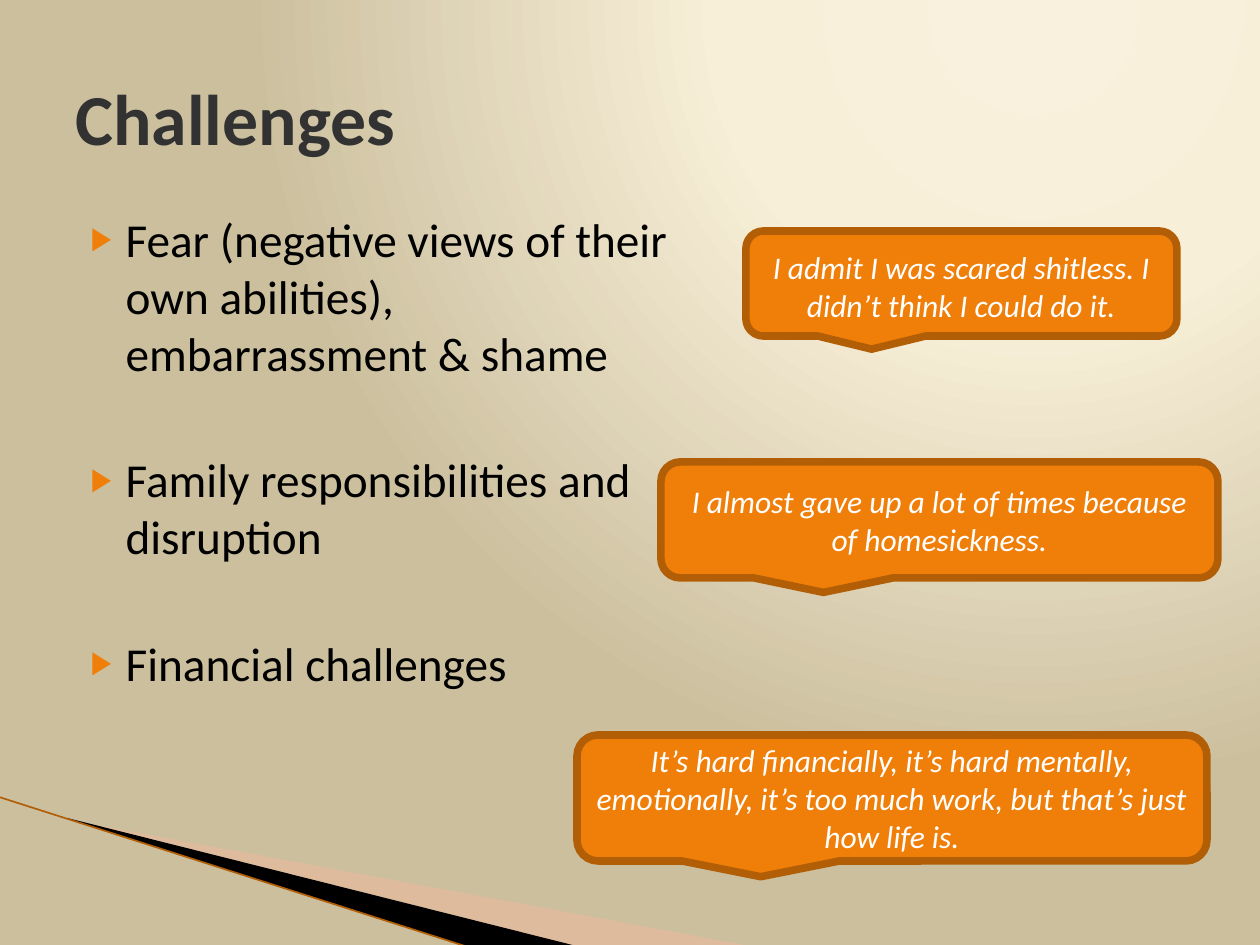
from lxml.etree import SubElement
from pptx import Presentation
from pptx.dml.color import RGBColor
from pptx.enum.shapes import MSO_CONNECTOR as Connector, MSO_SHAPE as Preset
from pptx.enum.text import MSO_ANCHOR as Anchor, PP_ALIGN as Align
from pptx.oxml.ns import qn
from pptx.util import Emu, Pt

SCALE = 914400 / 126
BLACK = RGBColor(0x00, 0x00, 0x00)
WHITE = RGBColor(0xFF, 0xFF, 0xFF)
CHARCOAL = RGBColor(0x32, 0x32, 0x32)
ORANGE = RGBColor(0xF0, 0x7F, 0x09)
BROWN = RGBColor(0xB2, 0x5E, 0x07)
PEACH = RGBColor(0xFC, 0xB7, 0x9B)
BACKGROUND = {0: RGBColor(0xF9, 0xF1, 0xDE), 40: RGBColor(0xF8, 0xEF, 0xD8),
              100: RGBColor(0xCB, 0xBF, 0x9E)}

TITLE = {"size": Pt(41), "bold": True, "color": CHARCOAL}
BODY = {"size": Pt(27), "color": BLACK}
QUOTE = {"size": Pt(18), "italic": True, "color": WHITE}

CHALLENGES = [
    "Fear (negative views of their own abilities), embarrassment & shame",
    "Family responsibilities and disruption",
    "Financial challenges",
]


def px(length):
    return Emu(round(length * SCALE))


class SlideBuilder:
    font_name = "Calibri"

    def __init__(self, slide):
        self.slide = slide
        self.shapes = slide.shapes

    def style(self, font, values):
        font.name = self.font_name
        for name, value in values.items():
            if name == "color":
                font.color.rgb = value
            else:
                setattr(font, name, value)

    def place(self, shape, box):
        for name, length in zip(("left", "top", "width", "height"), box):
            setattr(shape, name, px(length))

    def background(self, stops, focus):
        self.slide.background.fill.gradient()
        gradient = self.slide.element.find(".//" + qn("a:gradFill"))
        gradient.clear()
        stop_list = SubElement(gradient, qn("a:gsLst"))
        for position, color in stops.items():
            stop = SubElement(stop_list, qn("a:gs"), pos=str(position * 1000))
            SubElement(stop, qn("a:srgbClr"), val=str(color))
        circle = SubElement(gradient, qn("a:path"))
        circle.set("path", "circle")
        edges = {side: str(value * 1000) for side, value in zip("ltrb", focus)}
        SubElement(circle, qn("a:fillToRect"), edges)

    def wedge(self, points, color, opacity=100):
        builder = self.shapes.build_freeform(*points[0], scale=SCALE)
        builder.add_line_segments(points[1:], close=True)
        shape = builder.convert_to_shape()
        shape.shadow.inherit = False
        shape.fill.solid()
        shape.fill.fore_color.rgb = color
        shape.line.fill.background()
        if opacity < 100:
            fill_color = shape.element.spPr.find(".//" + qn("a:srgbClr"))
            SubElement(fill_color, qn("a:alpha"), val=str(opacity * 1000))

    def line(self, start, end, color, width):
        ends = [px(length) for length in (*start, *end)]
        connector = self.shapes.add_connector(Connector.STRAIGHT, *ends)
        connector.line.color.rgb = color
        connector.line.width = Pt(width)
        SubElement(connector.element.spPr, qn("a:effectLst"))

    def bullets(self, items, box):
        body = self.slide.placeholders[1]
        self.place(body, box)
        self.shapes.element.append(body.element)
        frame = body.text_frame
        for index, item in enumerate(items):
            paragraph = frame.add_paragraph() if index else frame.paragraphs[0]
            run = paragraph.add_run()
            run.text = item
            properties = paragraph._p.get_or_add_pPr()
            properties.set("marL", str(px(50)))
            properties.set("indent", str(px(-35)))
            bullet_color = SubElement(properties, qn("a:buClr"))
            SubElement(bullet_color, qn("a:srgbClr"), val=str(ORANGE))
            SubElement(properties, qn("a:buSzPct"), val="68000")
            SubElement(properties, qn("a:buChar"), char="▶")
            paragraph.space_before = Pt(40 if index else 0)
            self.style(run.font, BODY)

    def title(self, text, box):
        title = self.shapes.title
        self.place(title, box)
        self.shapes.element.append(title.element)
        title.text_frame.vertical_anchor = Anchor.MIDDLE
        self.fill_text(title.text_frame, text, TITLE, Align.LEFT)

    def fill_text(self, frame, text, values, alignment):
        frame.word_wrap = True
        paragraph = frame.paragraphs[0]
        paragraph.alignment = alignment
        run = paragraph.add_run()
        run.text = text
        self.style(run.font, values)

    def callout(self, box, text=None):
        shape = self.shapes.add_shape(Preset.ROUNDED_RECTANGULAR_CALLOUT,
                                      *map(px, box))
        shape.shadow.inherit = False
        shape.fill.solid()
        shape.fill.fore_color.rgb = ORANGE
        shape.line.color.rgb = BROWN
        shape.line.width = Pt(4.33)
        if text:
            shape.text_frame.vertical_anchor = Anchor.MIDDLE
            self.fill_text(shape.text_frame, text, QUOTE, Align.CENTER)

    def quote(self, box, text):
        text_box = self.shapes.add_textbox(*map(px, box))
        self.fill_text(text_box.text_frame, text, QUOTE, Align.CENTER)


def main():
    presentation = Presentation()
    presentation.slide_width = px(1260)
    presentation.slide_height = px(945)
    slide = presentation.slides.add_slide(presentation.slide_layouts[1])
    builder = SlideBuilder(slide)

    builder.background(BACKGROUND, (65, 0, 0, 98))
    builder.wedge([(69, 820), (750, 946), (575, 946), (69, 819)], PEACH, 40)
    builder.wedge([(67, 818), (576, 946), (469, 947), (68, 819)], BLACK)
    builder.line((-1, 797), (468, 947), BROWN, 0.95)
    builder.bullets(CHALLENGES, (63, 204, 630, 624))
    builder.title("Challenges", (63, 38, 1134, 157))
    builder.callout((746, 231, 431, 105))
    builder.quote((746, 242, 431, 89),
                  "I admit I was scared shitless. I didn’t think I could do it.")
    builder.callout((661, 462, 557, 116),
                    "I almost gave up a lot of times because of homesickness.")
    builder.callout((577, 735, 630, 126),
                    "It’s hard financially, it’s hard mentally, emotionally, "
                    "it’s too much work, but that’s just how life is.")
    presentation.save("out.pptx")


if __name__ == "__main__":
    main()
